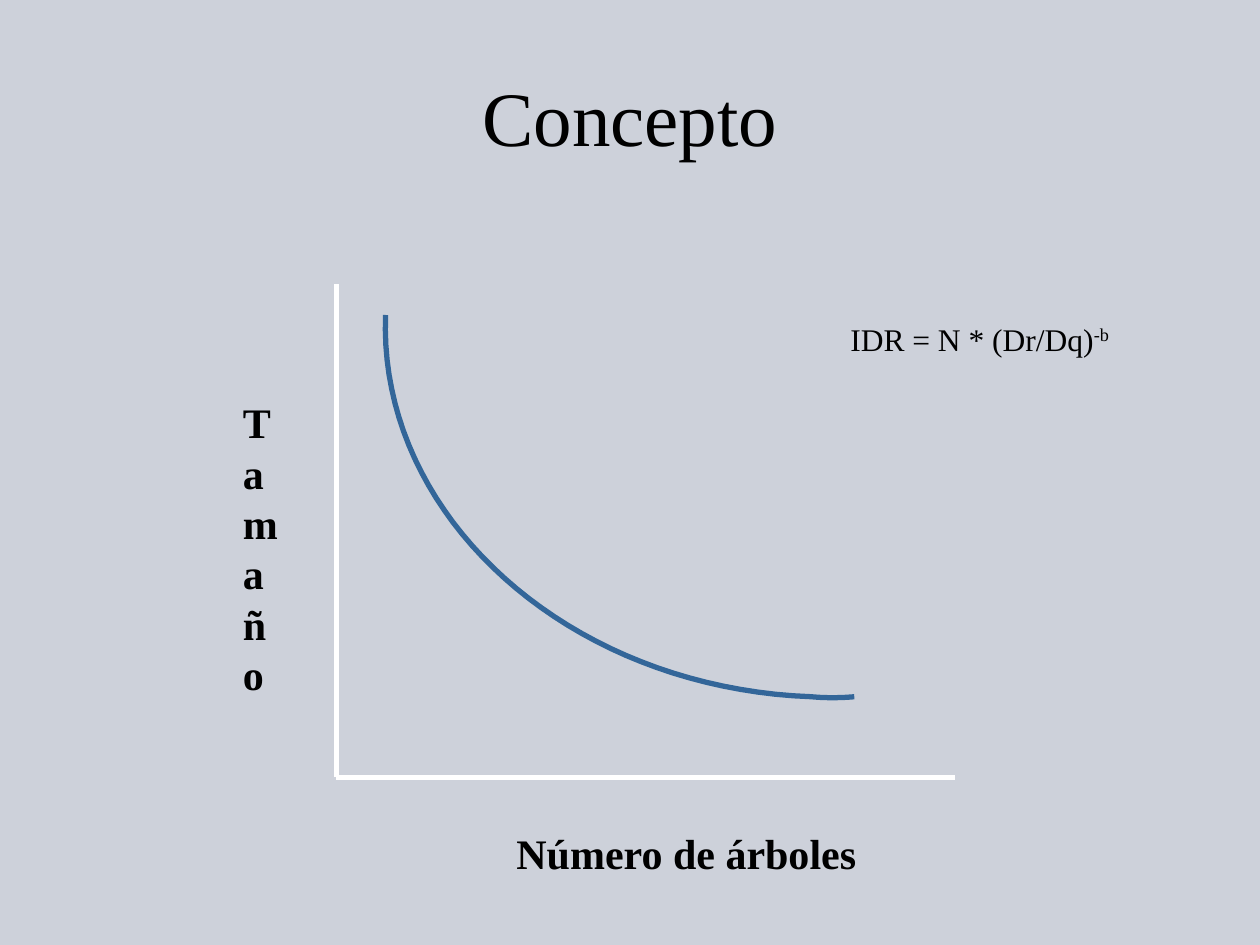
from lxml import etree
from pptx import Presentation
from pptx.dml.color import RGBColor
from pptx.enum.shapes import MSO_CONNECTOR
from pptx.enum.text import MSO_ANCHOR, PP_ALIGN
from pptx.oxml.ns import qn
from pptx.util import Inches, Pt

STRAIGHT = MSO_CONNECTOR.STRAIGHT
LEFT, CENTER = PP_ALIGN.LEFT, PP_ALIGN.CENTER
TOP, MIDDLE = MSO_ANCHOR.TOP, MSO_ANCHOR.MIDDLE

COLORS = {"background": "CDD1DA", "text": "000000", "axis": "FFFFFF", "curve": "336699"}
FONT = "Times New Roman"
LINE_WIDTH = Pt(3)

TITLE_FORMAT = {"size": Pt(44), "bold": False}
LABEL_FORMAT = {"size": Pt(24), "bold": True}
FORMULA_FORMAT = {"size": Pt(18), "bold": False}

# runs (text, baseline shift), box, font format, alignment, anchor, wrap, line spacing
TEXTS = [
    ([("Concepto", 0)], (0.75, 0.42, 8.5, 1), TITLE_FORMAT, CENTER, MIDDLE, True, None),
    ([("Tamaño", 0)], (1.83, 3.1, 0.33, 2.93), LABEL_FORMAT, LEFT, TOP, True, Pt(28.8)),
    ([("Número de árboles", 0)], (4, 6.52, 2.95, 0.51), LABEL_FORMAT, LEFT, TOP, True, Pt(28.8)),
    ([("IDR = N * (Dr/Dq)", 0), ("-b", 30000)], (6.65, 2.49, 2.29, 0.4),
     FORMULA_FORMAT, LEFT, TOP, False, None),
]

ORIGIN = (2.67, 6.17)
AXIS_ENDS = [(2.67, 2.25), (7.58, 6.17)]

# Bezier segments: start, two control points, end
CURVE = [
    ((6.78, 5.53), (6.66, 5.54), (6.55, 5.54), (6.44, 5.53)),
    ((6.44, 5.53), (4.51, 5.46), (3, 4.1), (3.06, 2.5)),
]
CURVE_STEPS = 40


def color(name):
    return RGBColor.from_string(COLORS[name])


def style_line(shape, color_name):
    shape.line.color.rgb = color(color_name)
    shape.line.width = LINE_WIDTH


def add_text(slide, runs, box, font_format, alignment, anchor, wrap, spacing):
    frame = slide.shapes.add_textbox(*map(Inches, box)).text_frame
    frame.word_wrap = wrap
    frame.vertical_anchor = anchor
    paragraph = frame.paragraphs[0]
    paragraph.alignment = alignment
    paragraph.line_spacing = spacing
    for text, baseline in runs:
        run = paragraph.add_run()
        run.text = text
        run.font.name = FONT
        run.font.color.rgb = color("text")
        for attribute, value in font_format.items():
            setattr(run.font, attribute, value)
        if baseline:
            run.font._element.set("baseline", str(baseline))


def add_axis(slide, end):
    axis = slide.shapes.add_connector(STRAIGHT, *map(Inches, ORIGIN + end))
    style_line(axis, "axis")
    etree.SubElement(axis._element.spPr, qn("a:effectLst"))


def bezier_point(segment, t):
    weights = ((1 - t) ** 3, 3 * t * (1 - t) ** 2, 3 * t ** 2 * (1 - t), t ** 3)
    return tuple(Inches(sum(weight * point[axis] for weight, point in zip(weights, segment)))
                 for axis in (0, 1))


def add_curve(slide):
    points = [bezier_point(segment, step / CURVE_STEPS)
              for segment in CURVE for step in range(1, CURVE_STEPS + 1)]
    builder = slide.shapes.build_freeform(*bezier_point(CURVE[0], 0))
    builder.add_line_segments(points, close=False)
    curve = builder.convert_to_shape()
    curve.shadow.inherit = False
    curve.fill.background()
    style_line(curve, "curve")


def main():
    presentation = Presentation()
    presentation.slide_width, presentation.slide_height = Inches(10), Inches(7.5)
    slide = presentation.slides.add_slide(presentation.slide_layouts[6])
    slide.background.fill.solid()
    slide.background.fill.fore_color.rgb = color("background")
    for end in AXIS_ENDS:
        add_axis(slide, end)
    add_curve(slide)
    for text in TEXTS:
        add_text(slide, *text)
    presentation.save("out.pptx")


if __name__ == "__main__":
    main()
